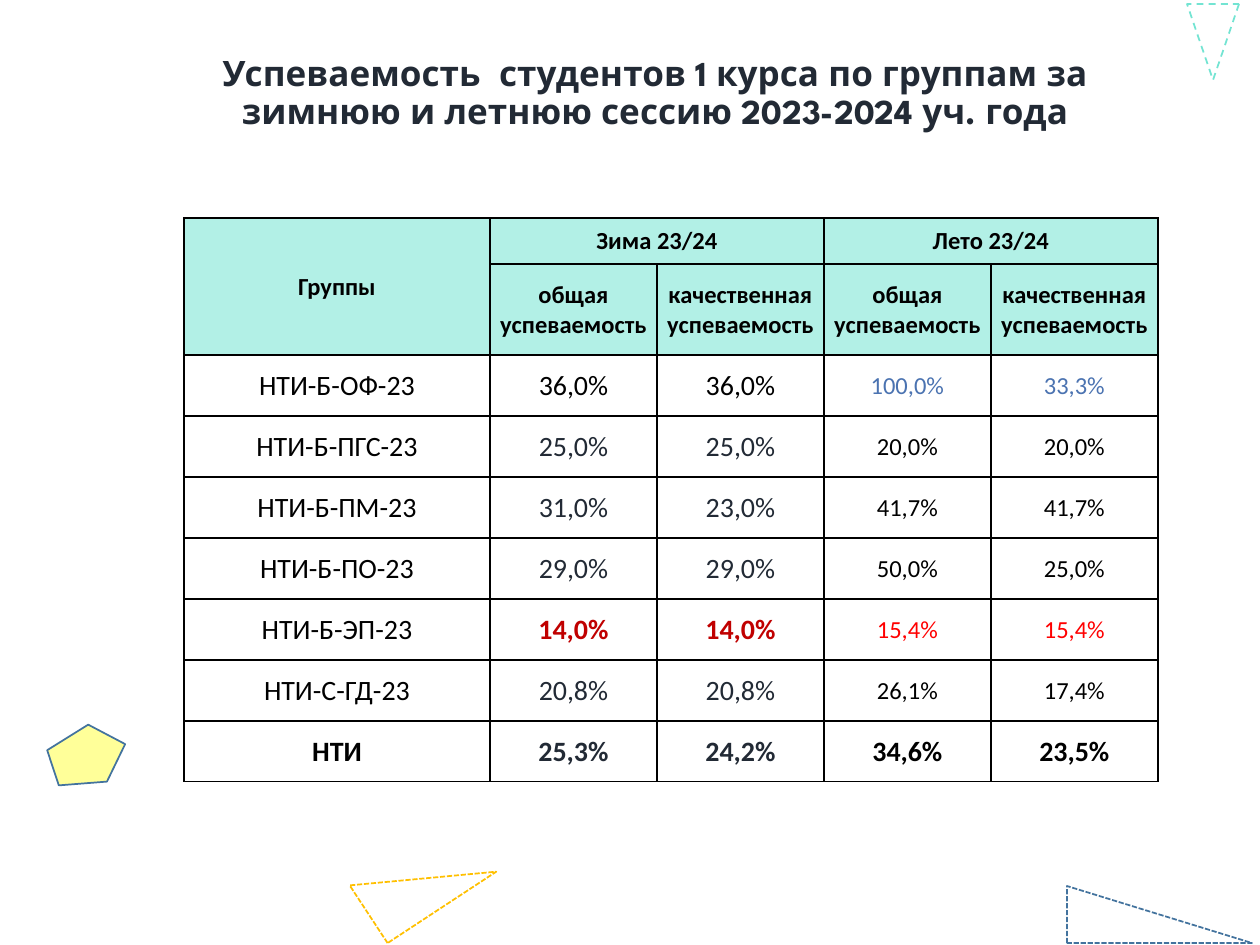
from dataclasses import dataclass

from lxml.etree import SubElement
from pptx import Presentation
from pptx.dml.color import RGBColor
from pptx.enum.dml import MSO_LINE
from pptx.enum.shapes import MSO_SHAPE
from pptx.enum.text import MSO_ANCHOR, MSO_AUTO_SIZE, PP_ALIGN
from pptx.oxml.ns import qn
from pptx.util import Emu, Pt

PX = 914400 / 126


@dataclass(frozen=True)
class Theme:
    heading_font: str = "League Spartan"
    body_font: str = "Calibri"
    title_size: int = 20
    group_size: int = 16
    small_size: int = 14
    black: str = "000000"
    dark: str = "222A35"
    white: str = "FFFFFF"
    header: str = "B2F0E6"
    blue: str = "4B73B1"
    crimson: str = "C00000"
    red: str = "FF0000"
    yellow: str = "FFFF99"
    steel: str = "43739E"
    amber: str = "FFC000"
    mint: str = "73E4D2"


THEME = Theme()


@dataclass(frozen=True)
class GroupResult:
    group: str
    winter: tuple
    summer: tuple
    winter_color: str = THEME.dark
    summer_color: str = THEME.black
    winter_bold: bool = False
    total: bool = False


RESULTS = [
    GroupResult("НТИ-Б-ОФ-23", ("36,0%", "36,0%"), ("100,0%", "33,3%"),
                winter_color=THEME.black, summer_color=THEME.blue),
    GroupResult("НТИ-Б-ПГС-23", ("25,0%", "25,0%"), ("20,0%", "20,0%")),
    GroupResult("НТИ-Б-ПМ-23", ("31,0%", "23,0%"), ("41,7%", "41,7%")),
    GroupResult("НТИ-Б-ПО-23", ("29,0%", "29,0%"), ("50,0%", "25,0%")),
    GroupResult("НТИ-Б-ЭП-23", ("14,0%", "14,0%"), ("15,4%", "15,4%"),
                winter_color=THEME.crimson, summer_color=THEME.red, winter_bold=True),
    GroupResult("НТИ-С-ГД-23", ("20,8%", "20,8%"), ("26,1%", "17,4%")),
    GroupResult("НТИ", ("25,3%", "24,2%"), ("34,6%", "23,5%"),
                winter_bold=True, total=True),
]
SESSIONS = ["Зима 23/24", "Лето 23/24"]
MEASURES = ["общая успеваемость", "качественная успеваемость"]
COLUMN_WIDTHS = [306] + [167] * 4
ROW_HEIGHTS = [46, 91] + [61] * len(RESULTS)


def px(length):
    return Emu(round(length * PX))


def rgb(color):
    return RGBColor.from_string(color)


def write(frame, text, *, size, color=THEME.black, bold=False,
          font=THEME.body_font, line_spacing=None):
    paragraph = frame.paragraphs[0]
    paragraph.alignment = PP_ALIGN.CENTER
    paragraph.line_spacing = line_spacing
    run = paragraph.add_run()
    run.text = text
    run.font.name = font
    run.font.size = Pt(size)
    run.font.bold = bold
    run.font.color.rgb = rgb(color)


def set_margins(target, left, top, right, bottom):
    target.margin_left, target.margin_top = px(left), px(top)
    target.margin_right, target.margin_bottom = px(right), px(bottom)


def add_title(slide, text):
    title = slide.shapes.title
    title.left, title.top, title.width, title.height = px(154), px(37), px(1002), px(110)
    frame = title.text_frame
    frame.word_wrap = True
    frame.auto_size = MSO_AUTO_SIZE.SHAPE_TO_FIT_TEXT
    frame.vertical_anchor = MSO_ANCHOR.TOP
    set_margins(frame, 13, 19, 13, 6)
    write(frame, text, size=THEME.title_size, color=THEME.dark, bold=True,
          font=THEME.heading_font, line_spacing=0.9)


def format_cell(cell, fill):
    properties = cell._tc.get_or_add_tcPr()
    for side in ("a:lnL", "a:lnR", "a:lnT", "a:lnB"):
        border = SubElement(properties, qn(side), w=str(Pt(1)))
        SubElement(SubElement(border, qn("a:solidFill")), qn("a:srgbClr"), val=THEME.black)
    cell.fill.solid()
    cell.fill.fore_color.rgb = rgb(fill)
    cell.vertical_anchor = MSO_ANCHOR.MIDDLE
    set_margins(cell, 1, 1, 1, 0)


def fill_header(table):
    def head(row, column, text):
        write(table.cell(row, column).text_frame, text, size=THEME.small_size, bold=True)

    table.cell(0, 0).merge(table.cell(1, 0))
    head(0, 0, "Группы")
    for index, session in enumerate(SESSIONS):
        first = 1 + index * len(MEASURES)
        table.cell(0, first).merge(table.cell(0, first + 1))
        head(0, first, session)
        for offset, measure in enumerate(MEASURES):
            head(1, first + offset, measure)


def fill_result(table, row, result):
    write(table.cell(row, 0).text_frame, result.group,
          size=THEME.group_size, bold=result.total)
    summer_size = THEME.group_size if result.total else THEME.small_size
    for column, rate in enumerate(result.winter, start=1):
        write(table.cell(row, column).text_frame, rate, size=THEME.group_size,
              color=result.winter_color, bold=result.winter_bold)
    for column, rate in enumerate(result.summer, start=3):
        write(table.cell(row, column).text_frame, rate, size=summer_size,
              color=result.summer_color, bold=result.total)


def add_results_table(slide):
    table = slide.shapes.add_table(
        len(ROW_HEIGHTS), len(COLUMN_WIDTHS), px(184), px(218),
        px(sum(COLUMN_WIDTHS)), px(sum(ROW_HEIGHTS))).table
    table.first_row = table.horz_banding = False
    for column, width in zip(table.columns, COLUMN_WIDTHS):
        column.width = px(width)
    for index, (row, height) in enumerate(zip(table.rows, ROW_HEIGHTS)):
        row.height = px(height)
        for cell in row.cells:
            format_cell(cell, THEME.header if index < 2 else THEME.white)
    fill_header(table)
    for row, result in enumerate(RESULTS, start=2):
        fill_result(table, row, result)


def add_ornament(slide, preset, box, line, *, fill=None, dash=None, rotation=0):
    ornament = slide.shapes.add_shape(preset, *map(px, box))
    ornament.shadow.inherit = False
    ornament.rotation = rotation
    if fill:
        ornament.fill.solid()
        ornament.fill.fore_color.rgb = rgb(fill)
    else:
        ornament.fill.background()
    ornament.line.color.rgb = rgb(line)
    ornament.line.width = Pt(1)
    if dash:
        ornament.line.dash_style = dash


def main():
    deck = Presentation()
    deck.slide_width, deck.slide_height = px(1260), px(945)
    slide = deck.slides.add_slide(deck.slide_layouts[5])

    # Title and results
    add_title(slide, "Успеваемость  студентов 1 курса по группам за "
                     "зимнюю и летнюю сессию 2023-2024 уч. года")
    add_results_table(slide)

    # Geometric ornaments around the edges
    add_ornament(slide, MSO_SHAPE.REGULAR_PENTAGON, (59, 718, 60, 76), THEME.steel,
                 fill=THEME.yellow, rotation=71.8)
    add_ornament(slide, MSO_SHAPE.RIGHT_TRIANGLE, (1067, 886, 185, 57), THEME.steel,
                 dash=MSO_LINE.SQUARE_DOT)
    add_ornament(slide, MSO_SHAPE.RIGHT_TRIANGLE, (358, 844, 130, 69), THEME.amber,
                 dash=MSO_LINE.SQUARE_DOT, rotation=326.7)
    add_ornament(slide, MSO_SHAPE.ISOSCELES_TRIANGLE, (1187, 4, 52, 76), THEME.mint,
                 fill=THEME.white, dash=MSO_LINE.DASH, rotation=180)

    deck.save("out.pptx")


if __name__ == "__main__":
    main()
